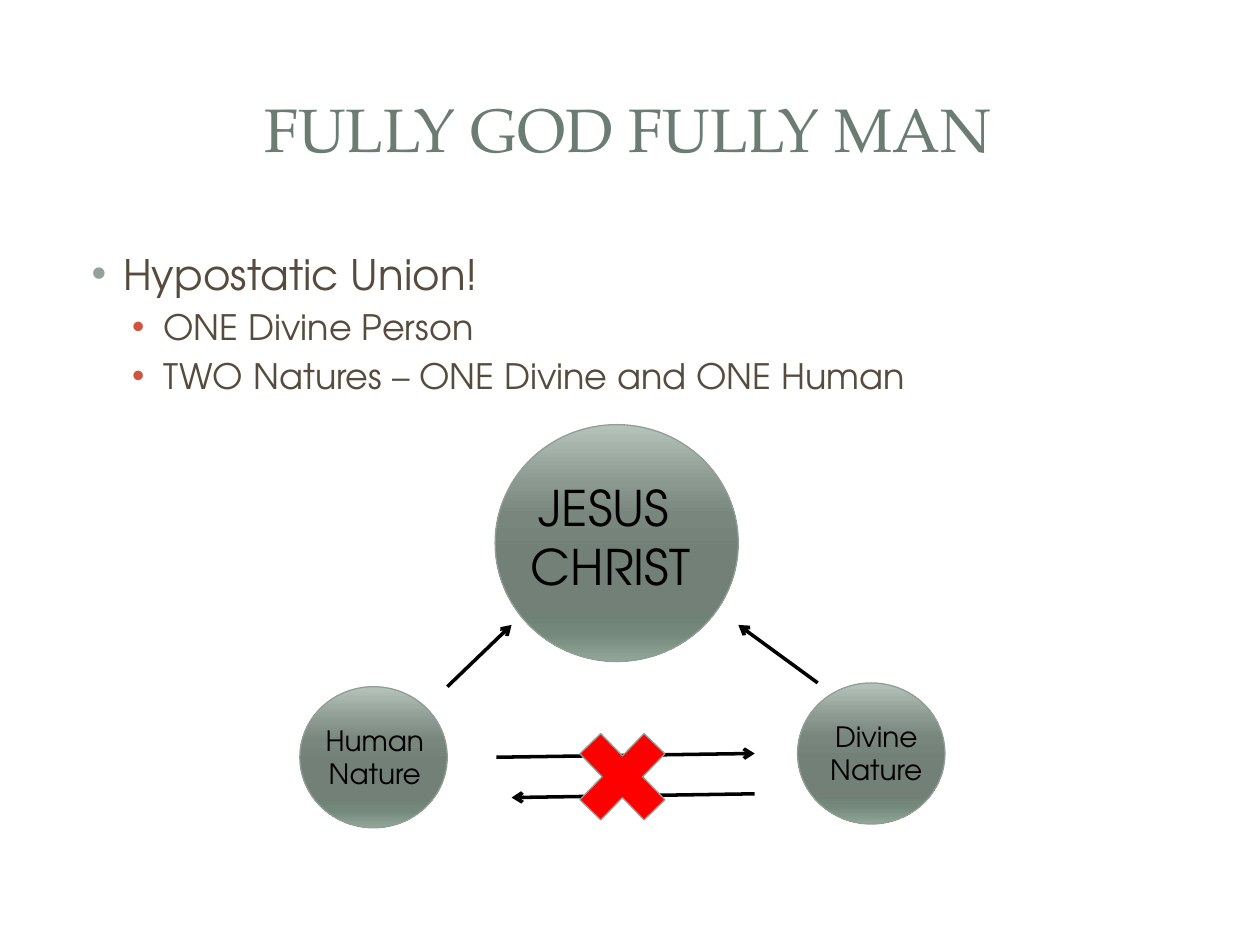
from dataclasses import dataclass

from lxml.etree import SubElement
from pptx import Presentation
from pptx.dml.color import RGBColor
from pptx.enum.shapes import MSO_CONNECTOR, MSO_SHAPE
from pptx.enum.text import MSO_ANCHOR, PP_ALIGN
from pptx.oxml.ns import qn
from pptx.util import Inches, Pt

COLORS = {
    "title": "6B7D72", "body": "564B3C", "bullet": "93A299",
    "sub_bullet": "CF543F", "black": "000000", "outline": "8F9F96",
    "cross": "FF0000",
}
GRADIENT = {0: "B6C3BB", 25: "8B9890", 38: "79867E", 55: "728078",
            80: "708176", 88: "75887C", 100: "91A79A"}
SERIF = "TeX Gyre Pagella"
SANS = "TeX Gyre Adventor"


@dataclass
class Box:
    left: float
    top: float
    width: float
    height: float

    def lengths(self):
        return [Inches(v) for v in (self.left, self.top, self.width, self.height)]


@dataclass
class Label:
    lines: list[str]
    box: Box
    size: int
    font: str = SANS
    color: str = "black"
    anchor: MSO_ANCHOR = MSO_ANCHOR.TOP


@dataclass
class Bullet:
    text: str
    size: int
    indent: float
    color: str
    level: int = 0
    space: int = 0


@dataclass
class Arrow:
    start: tuple[float, float]
    end: tuple[float, float]


CIRCLES = [Box(3.93, 3.37, 1.93, 1.88), Box(6.33, 5.42, 1.17, 1.12),
           Box(2.38, 5.45, 1.17, 1.12)]
LABELS = [
    Label(["FULLY GOD FULLY MAN"], Box(0.47, 0.45, 9.03, 1.14), 35, SERIF,
          "title", MSO_ANCHOR.MIDDLE),
    Label(["JESUS ", "CHRIST"], Box(3.88, 3.74, 1.93, 1.04), 28),
    Label(["Human", "Nature"], Box(2.01, 5.69, 1.93, 0.64), 16),
    Label(["Divine", "Nature"], Box(5.99, 5.66, 1.93, 0.64), 16),
]
BULLETS = [
    Bullet("Hypostatic Union!", 24, 0.38, "bullet"),
    Bullet("ONE Divine Person", 20, 0.7, "sub_bullet", 1, 4),
    Bullet("TWO Natures – ONE Divine and ONE Human", 20, 0.7, "sub_bullet", 1, 4),
]
ARROWS = [
    Arrow((6.49, 5.42), (5.86, 4.96)), Arrow((3.55, 5.45), (4.06, 4.96)),
    Arrow((5.99, 6.3), (4.06, 6.33)), Arrow((3.94, 6.01), (5.99, 5.98)),
]


def rgb(name: str) -> RGBColor:
    return RGBColor.from_string(COLORS[name])


def add_run(p, text: str, size: int, font: str, color: str) -> None:
    r = p.add_run()
    r.text = text
    r.font.size = Pt(size)
    r.font.name = font
    r.font.color.rgb = rgb(color)


def add_frame(s, box: Box):
    tf = s.shapes.add_textbox(*box.lengths()).text_frame
    tf.word_wrap = True
    return tf


def add_label(s, label: Label) -> None:
    tf = add_frame(s, label.box)
    tf.vertical_anchor = label.anchor
    for i, line in enumerate(label.lines):
        p = tf.add_paragraph() if i else tf.paragraphs[0]
        p.alignment = PP_ALIGN.CENTER
        add_run(p, line, label.size, label.font, label.color)


def add_bullets(s, box: Box, bullets: list[Bullet]) -> None:
    tf = add_frame(s, box)
    for i, b in enumerate(bullets):
        p = tf.add_paragraph() if i else tf.paragraphs[0]
        pPr = p._p.get_or_add_pPr()
        pPr.set("marL", str(Inches(b.indent)))
        pPr.set("indent", str(Inches(-0.25)))
        clr = SubElement(pPr, qn("a:buClr"))
        SubElement(clr, qn("a:srgbClr"), val=COLORS[b.color])
        SubElement(pPr, qn("a:buFont"), typeface="Arial")
        SubElement(pPr, qn("a:buChar"), char="•")
        p.level = b.level
        p.space_before = Pt(b.space)
        add_run(p, b.text, b.size, SANS, "body")


def add_outlined(s, kind: MSO_SHAPE, box: Box):
    sp = s.shapes.add_shape(kind, *box.lengths())
    sp.shadow.inherit = False
    sp.line.color.rgb = rgb("outline")
    sp.line.width = Pt(0.75)
    return sp


def add_circle(s, box: Box) -> None:
    sp = add_outlined(s, MSO_SHAPE.OVAL, box)
    sp.fill.gradient()
    sp.fill.gradient_angle = 270
    stops = sp._element.spPr.find(qn("a:gradFill")).find(qn("a:gsLst"))
    for stop in list(stops):
        stops.remove(stop)
    for pos, color in GRADIENT.items():
        gs = SubElement(stops, qn("a:gs"), pos=str(pos * 1000))
        SubElement(gs, qn("a:srgbClr"), val=color)


def add_arrow(s, arrow: Arrow) -> None:
    points = [Inches(v) for v in arrow.start + arrow.end]
    cx = s.shapes.add_connector(MSO_CONNECTOR.STRAIGHT, *points)
    cx.line.color.rgb = rgb("black")
    cx.line.width = Pt(2)
    SubElement(cx.line._get_or_add_ln(), qn("a:tailEnd"), type="arrow")
    SubElement(cx._element.spPr, qn("a:effectLst"))


def main() -> None:
    prs = Presentation()
    prs.slide_width = Inches(10)
    prs.slide_height = Inches(7.5)
    s = prs.slides.add_slide(prs.slide_layouts[6])
    add_bullets(s, Box(0.5, 1.92, 9, 4.78), BULLETS)
    for circle in CIRCLES:
        add_circle(s, circle)
    for label in LABELS:
        add_label(s, label)
    for arrow in ARROWS:
        add_arrow(s, arrow)
    cross = add_outlined(s, MSO_SHAPE.MATH_MULTIPLY, Box(4.45, 5.66, 0.98, 1.01))
    cross.fill.solid()
    cross.fill.fore_color.rgb = rgb("cross")
    prs.save("out.pptx")


if __name__ == "__main__":
    main()
